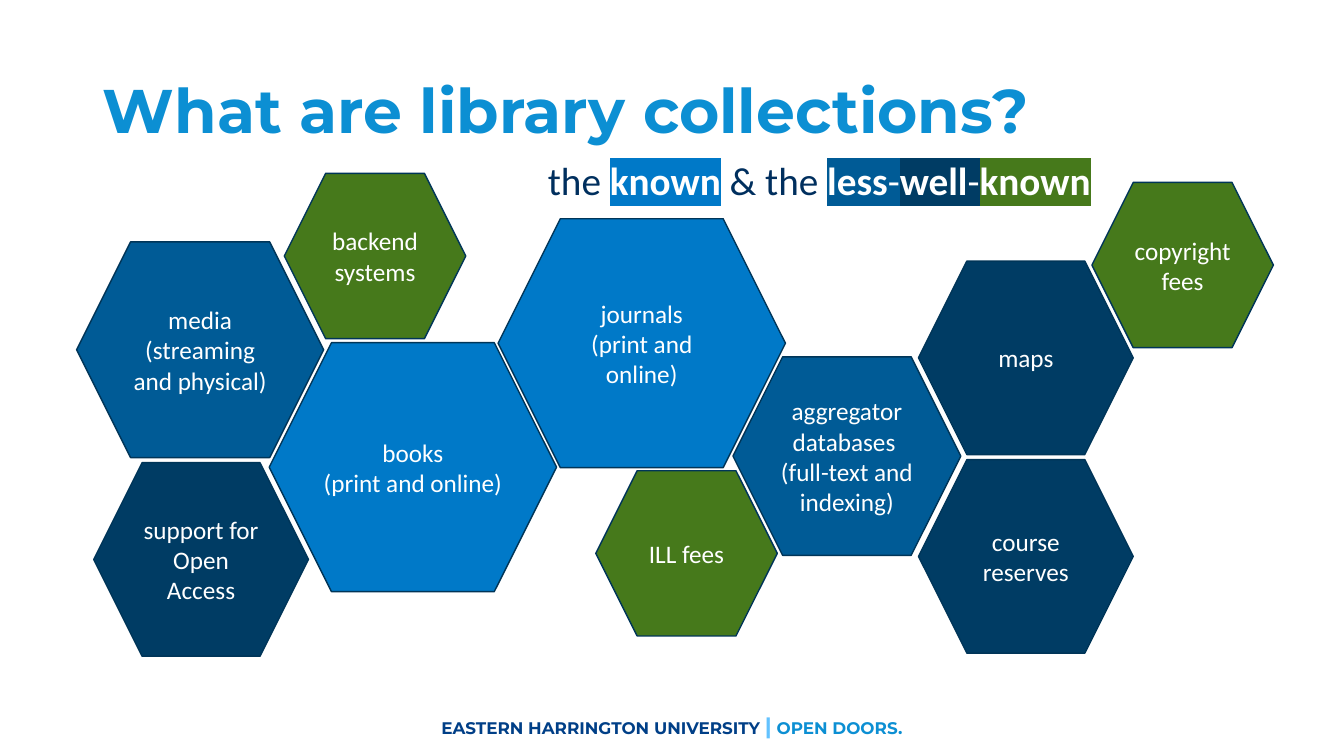
import pptx
import pptx.dml.color
import pptx.enum.shapes
import pptx.enum.text
import pptx.oxml
import pptx.oxml.ns
import pptx.util

Inches = pptx.util.Inches
RGBColor = pptx.dml.color.RGBColor
PP_ALIGN = pptx.enum.text.PP_ALIGN
MIDDLE = pptx.enum.text.MSO_ANCHOR.MIDDLE

WHITE = RGBColor(0xFF, 0xFF, 0xFF)
SKY = RGBColor(0x0C, 0x8F, 0xD3)
PALE_SKY = RGBColor(0x63, 0xC2, 0xFF)
ROYAL = RGBColor(0x00, 0x3F, 0x87)
INK = RGBColor(0x00, 0x2F, 0x5E)
OUTLINE = RGBColor(0x00, 0x35, 0x58)
BLUE = RGBColor(0x00, 0x79, 0xC8)
MID_BLUE = RGBColor(0x00, 0x5B, 0x96)
NAVY = RGBColor(0x00, 0x3C, 0x64)
GREEN = RGBColor(0x46, 0x79, 0x1B)


def add_run(p, text, font, size, color, bold=False, highlight=None):
    r = p.add_run()
    r.text = text
    r.font.name = font
    r.font.size = pptx.util.Pt(size)
    r.font.bold = bold
    r.font.color.rgb = color
    if highlight is not None:
        mark = pptx.oxml.parse_xml(
            f'<a:highlight {pptx.oxml.ns.nsdecls("a")}>'
            f'<a:srgbClr val="{highlight}"/></a:highlight>')
        fill = r.font._element.find(pptx.oxml.ns.qn("a:solidFill"))
        fill.addnext(mark)


prs = pptx.Presentation()
prs.slide_width = Inches(13.33)
prs.slide_height = Inches(7.5)
slide = prs.slides.add_slide(prs.slide_layouts[5])

# Title
title = slide.shapes.title
title.left, title.top = Inches(0.92), Inches(0.4)
title.width, title.height = Inches(11.5), Inches(1.45)
tf = title.text_frame
tf.auto_size = pptx.enum.text.MSO_AUTO_SIZE.NONE
tf.vertical_anchor = MIDDLE
p = tf.paragraphs[0]
p.alignment = PP_ALIGN.LEFT
p.line_spacing = 0.9
add_run(p, "What are library collections?", "Montserrat", 44, SKY, True)

# Subtitle, whose highlights act as the colour key
subtitle = slide.shapes.add_textbox(Inches(5.29), Inches(1.5), Inches(5.67), Inches(0.57))
tf = subtitle.text_frame
tf.word_wrap = False
p = tf.paragraphs[0]
p.alignment = PP_ALIGN.CENTER
for text, color, bold, highlight in [
    ("the ", INK, False, None),
    ("known", WHITE, True, BLUE),
    (" ", WHITE, True, None),
    ("& the ", INK, False, None),
    ("less", WHITE, True, MID_BLUE),
    ("-", WHITE, False, MID_BLUE),
    ("well", WHITE, True, NAVY),
    ("-", WHITE, False, NAVY),
    ("known", WHITE, True, GREEN),
]:
    add_run(p, text, "Calibri", 28, color, bold, highlight)

# Hexagons: each colour has its own size, apart from the two mid-blue ones
LARGE, MEDIUM, SMALL = (2.85, 2.47), (2.13, 1.92), (1.8, 1.64)
hexagons = [
    (0.76, 2.4, (2.45, 2.14), MID_BLUE, True, ["media", "(streaming and physical)"]),
    (0.93, 4.59, MEDIUM, NAVY, True, ["support for Open Access"]),
    (2.82, 1.72, SMALL, GREEN, True, ["backend systems"]),
    (2.67, 3.4, LARGE, BLUE, False, ["books", "(print and online)"]),
    (4.94, 2.17, LARGE, BLUE, True, ["journals", "(print and online)"]),
    (5.91, 4.67, SMALL, GREEN, True, ["ILL fees"]),
    (7.27, 3.54, (2.26, 1.97), MID_BLUE, True,
     ["aggregator databases ", "(full-text and indexing)"]),
    (9.11, 2.59, MEDIUM, NAVY, True, ["maps"]),
    (9.11, 4.56, MEDIUM, NAVY, True, ["course reserves"]),
    (10.83, 1.81, SMALL, GREEN, True, ["copyright fees"]),
]
for left, top, (width, height), color, wrap, lines in hexagons:
    sp = slide.shapes.add_shape(
        pptx.enum.shapes.MSO_SHAPE.HEXAGON,
        Inches(left), Inches(top), Inches(width), Inches(height))
    sp.shadow.inherit = False
    sp.fill.solid()
    sp.fill.fore_color.rgb = color
    sp.line.color.rgb = OUTLINE
    sp.line.width = pptx.util.Pt(1)
    tf = sp.text_frame
    tf.word_wrap = wrap
    tf.vertical_anchor = MIDDLE
    for i, line in enumerate(lines):
        p = tf.add_paragraph() if i else tf.paragraphs[0]
        p.alignment = PP_ALIGN.CENTER
        add_run(p, line, "Calibri", 18, WHITE)

# Footer
footer = slide.shapes.add_textbox(Inches(0), Inches(7), Inches(13.33), Inches(0.4))
tf = footer.text_frame
tf.word_wrap = True
tf.vertical_anchor = MIDDLE
p = tf.paragraphs[0]
p.alignment = PP_ALIGN.CENTER
for text, size, color in [
    ("EASTERN HARRINGTON UNIVERSITY ", 12, ROYAL),
    ("|", 16, PALE_SKY),
    (" ", 12, ROYAL),
    ("OPEN DOORS.", 12, SKY),
]:
    add_run(p, text, "Montserrat", size, color, True)

prs.save("out.pptx")
